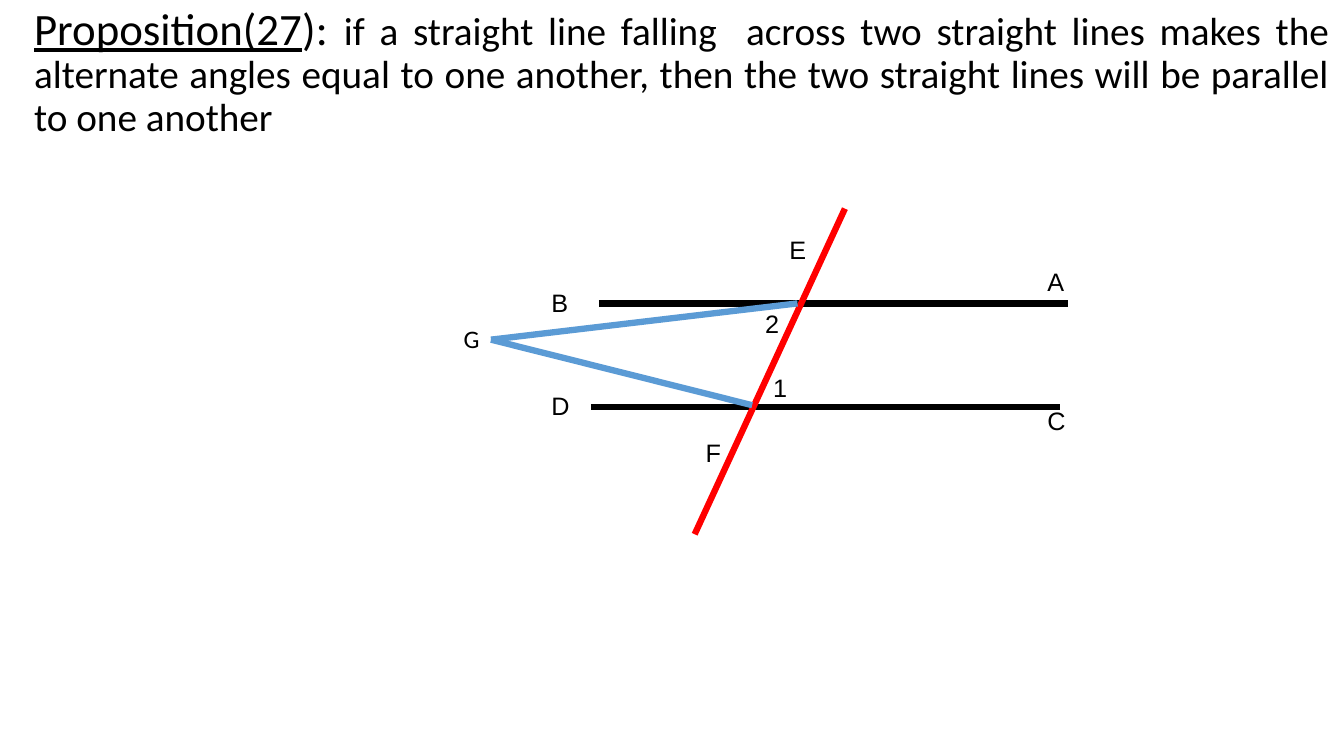
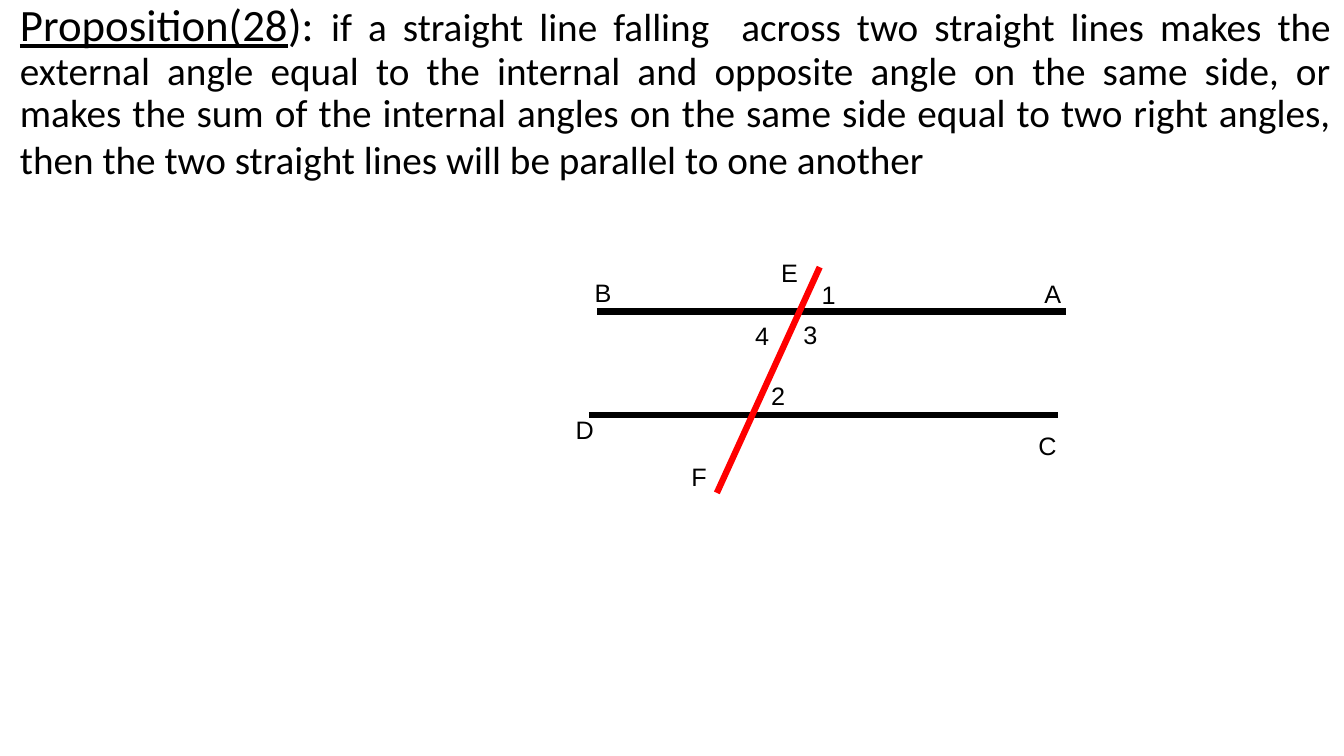
from dataclasses import dataclass

from lxml.etree import SubElement
from pptx import Presentation
from pptx.dml.color import RGBColor
from pptx.enum.shapes import MSO_CONNECTOR
from pptx.enum.text import MSO_ANCHOR, MSO_AUTO_SIZE, PP_ALIGN
from pptx.oxml.ns import qn
from pptx.slide import Slide
from pptx.text.text import _Paragraph
from pptx.util import Inches, Pt

BLACK, RED, BLUE = "000000", "FF0000", "5B9BD5"
HEADING_SIZE, STATEMENT_SIZE, LABEL_SIZE = 32, 28, 18
PARALLEL_LENGTH, PARALLEL_GAP, PARALLEL_SHIFT = 4.65, 1.03, -0.08

Point = tuple[float, float]


@dataclass(frozen=True)
class Segment:
    start: Point
    end: Point
    color: str = BLACK


@dataclass(frozen=True)
class Label:
    text: str
    left: float
    top: float
    font: str = "Arial"


@dataclass(frozen=True)
class Proposition:
    number: int
    statement: str
    heading_box: tuple[float, float, float, float]
    parallel_start: Point
    transversal: Segment
    labels: tuple[Label, ...]
    triangle_sides: tuple[Segment, ...] = ()
    ending: str = ""


PROPOSITIONS = (
    Proposition(
        27,
        "if a straight line falling  across two straight lines makes the "
        "alternate angles equal to one another, then the two straight lines "
        "will be parallel to one another",
        (0.24, 0.05, 13.04, 1.35),
        (5.94, 3.01),
        Segment((8.38, 2.07), (6.89, 5.3), RED),
        (
            Label("2", 7.49, 3.01),
            Label("1", 7.57, 3.64),
            Label("B", 5.37, 2.8),
            Label("A", 10.29, 2.59),
            Label("D", 5.37, 3.82),
            Label("C", 10.29, 3.97),
            Label("F", 6.9, 4.29),
            Label("E", 7.73, 2.28),
            Label("G", 4.5, 3.16, "Calibri"),
        ),
        (
            Segment((7.91, 3.01), (4.87, 3.37), BLUE),
            Segment((7.46, 4.02), (4.87, 3.37), BLUE),
        ),
    ),
    Proposition(
        28,
        "if a straight line falling  across two straight lines makes the "
        "external angle equal to the internal and opposite angle on the same "
        "side, or makes the sum of the internal angles on the same side equal "
        "to two right angles, then the two straight lines will be parallel to "
        "one another",
        (0.1, 0.03, 13.2, 1.8),
        (5.92, 3.09),
        Segment((8.13, 2.65), (7.11, 4.89), RED),
        (
            Label("3", 7.87, 3.12),
            Label("2", 7.55, 3.72),
            Label("B", 5.8, 2.7),
            Label("A", 10.26, 2.71),
            Label("D", 5.61, 4.06),
            Label("C", 10.2, 4.22),
            Label("F", 6.76, 4.53),
            Label("E", 7.65, 2.5),
            Label("1", 8.05, 2.72),
            Label("4", 7.39, 3.13),
        ),
        ending=" ",
    ),
)


def rgb(color: str) -> RGBColor:
    """Turn a hex string into a colour."""
    return RGBColor.from_string(color)


def add_run(paragraph: _Paragraph, text: str, size: int,
            font: str = "Calibri", underline: bool = False) -> None:
    """Append one black run to a paragraph."""
    run = paragraph.add_run()
    run.text = text
    run.font.name = font
    run.font.size = Pt(size)
    run.font.underline = underline
    run.font.color.rgb = rgb(BLACK)


def draw_heading(slide: Slide, proposition: Proposition) -> None:
    """Write the underlined proposition number and its statement."""
    box = slide.shapes.add_textbox(*map(Inches, proposition.heading_box))
    frame = box.text_frame
    frame.word_wrap = True
    frame.vertical_anchor = MSO_ANCHOR.MIDDLE
    paragraph = frame.paragraphs[0]
    paragraph.alignment = PP_ALIGN.JUSTIFY
    paragraph.line_spacing = 0.9
    add_run(paragraph, f"Proposition({proposition.number}", HEADING_SIZE, underline=True)
    add_run(paragraph, "): ", HEADING_SIZE)
    add_run(paragraph, proposition.statement, STATEMENT_SIZE)
    if proposition.ending:
        add_run(paragraph, proposition.ending, HEADING_SIZE)


def draw_segment(slide: Slide, segment: Segment) -> None:
    """Draw one thick straight line."""
    line = slide.shapes.add_connector(
        MSO_CONNECTOR.STRAIGHT, *map(Inches, segment.start + segment.end))
    line.line.color.rgb = rgb(segment.color)
    line.line.width = Pt(4.5)
    SubElement(line._element.spPr, qn("a:effectLst"))


def draw_parallels(slide: Slide, start: Point) -> None:
    """Draw the two parallel lines AB and CD."""
    for index in range(2):
        left = start[0] + index * PARALLEL_SHIFT
        top = start[1] + index * PARALLEL_GAP
        draw_segment(slide, Segment((left, top), (left + PARALLEL_LENGTH, top)))


def draw_label(slide: Slide, label: Label) -> None:
    """Write the name of a point or the number of an angle."""
    width = 0.34 if label.text.isdigit() else 0.37
    box = slide.shapes.add_textbox(
        Inches(label.left), Inches(label.top), Inches(width), Inches(0.4))
    frame = box.text_frame
    frame.word_wrap = False
    frame.auto_size = MSO_AUTO_SIZE.SHAPE_TO_FIT_TEXT
    add_run(frame.paragraphs[0], label.text, LABEL_SIZE, label.font)


def draw_proposition(slide: Slide, proposition: Proposition) -> None:
    """Draw the heading and the figure of one proposition."""
    draw_heading(slide, proposition)
    draw_parallels(slide, proposition.parallel_start)
    draw_segment(slide, proposition.transversal)
    for label in proposition.labels:
        draw_label(slide, label)
    for side in proposition.triangle_sides:
        draw_segment(slide, side)


def main() -> None:
    """Build and save the presentation."""
    presentation = Presentation()
    presentation.slide_width = Inches(13.33)
    presentation.slide_height = Inches(7.5)
    blank = presentation.slide_layouts[6]
    for proposition in PROPOSITIONS:
        draw_proposition(presentation.slides.add_slide(blank), proposition)
    presentation.save("out.pptx")


if __name__ == "__main__":
    main()
